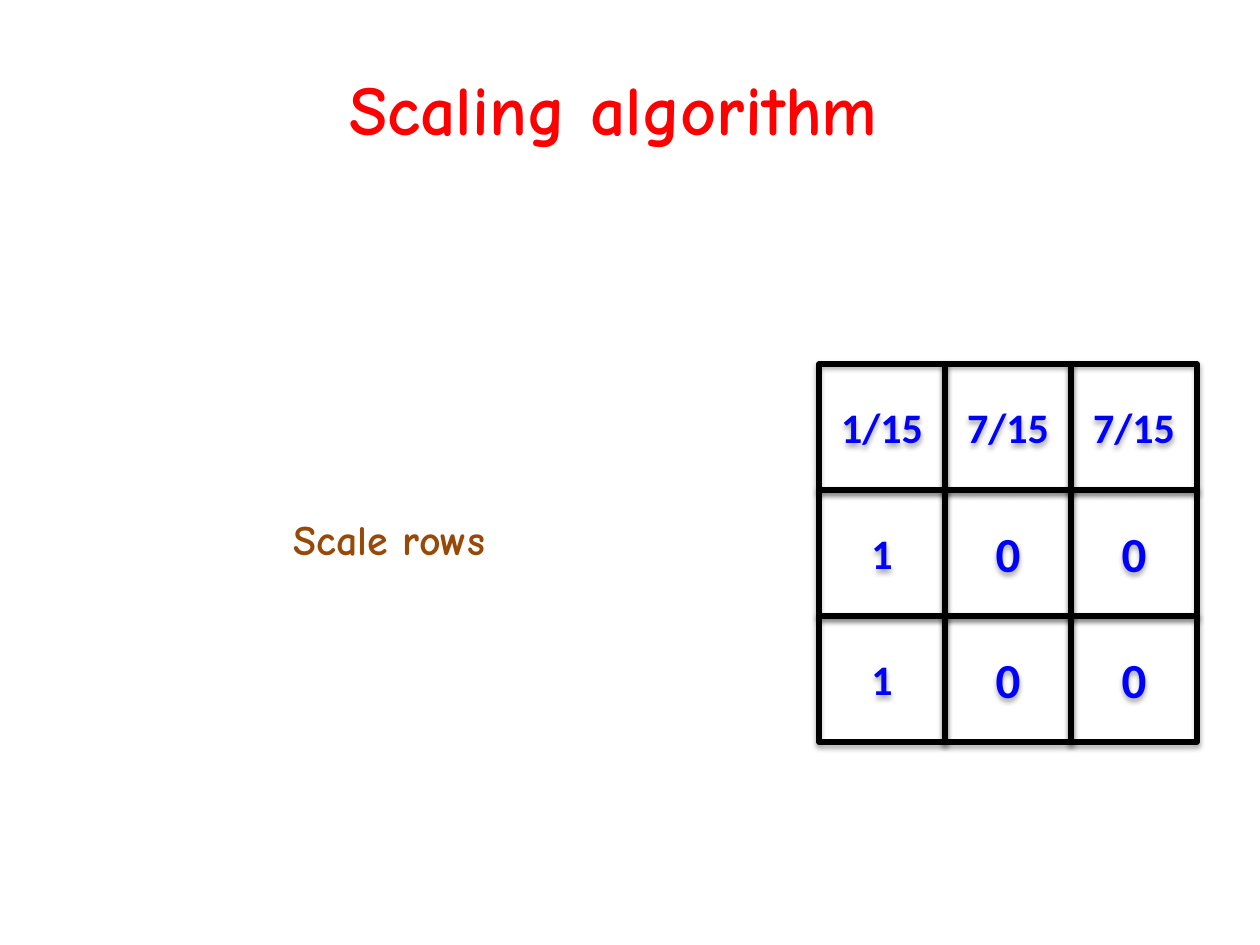
from lxml import etree
from pptx import Presentation
from pptx.dml.color import RGBColor
from pptx.enum.shapes import MSO_SHAPE
from pptx.enum.text import MSO_ANCHOR, MSO_AUTO_SIZE, PP_ALIGN
from pptx.oxml import parse_xml
from pptx.util import Emu, Pt

SHADOW = (
    '<a:effectLst xmlns:a="http://schemas.openxmlformats.org/drawingml/2006/main">'
    '<a:outerShdw blurRad="40000" dist="23000" dir="5400000" rotWithShape="0">'
    '<a:srgbClr val="000000"><a:alpha val="35000"/></a:srgbClr>'
    '</a:outerShdw></a:effectLst>'
)


def px(n):
    return Emu(n * 914400 // 126)


def write(sp, text, size, font, color, align):
    tf = sp.text_frame
    tf.text = text
    p = tf.paragraphs[0]
    p.alignment = align
    r = p.runs[0]
    r.font.size = Pt(size)
    r.font.name = font
    r.font.bold = True
    r.font.color.rgb = RGBColor.from_string(color)
    return tf


prs = Presentation()
prs.slide_width, prs.slide_height = px(1260), px(945)
s = prs.slides.add_slide(prs.slide_layouts[6])

# Matrix of scaled rows
rows = [["1/15", "7/15", "7/15"], ["1", "0", "0"], ["1", "0", "0"]]
left, top, cell = 819, 364, 126
for i, row in enumerate(rows):
    for j, value in enumerate(row):
        sp = s.shapes.add_shape(MSO_SHAPE.RECTANGLE, px(left + j * cell),
                                px(top + i * cell), px(cell), px(cell))
        sp.fill.background()
        sp.line.color.rgb = RGBColor.from_string("000000")
        sp.line.width = Pt(3)
        sp._element.spPr.append(parse_xml(SHADOW))
        size = 28 if value == "0" else 24
        tf = write(sp, value, size, "Calibri", "0000FF", PP_ALIGN.CENTER)
        tf.vertical_anchor = MSO_ANCHOR.MIDDLE

# Title
sp = s.shapes.add_textbox(px(78), px(6), px(1071), px(203))
tf = write(sp, "Scaling algorithm", 40, "Comic Neue", "FF0000", PP_ALIGN.CENTER)
tf.word_wrap = True
tf.vertical_anchor = MSO_ANCHOR.MIDDLE

# Step label
sp = s.shapes.add_textbox(px(281), px(507), px(246), px(63))
tf = write(sp, "Scale rows", 24, "Comic Neue", "984807", PP_ALIGN.LEFT)
tf.word_wrap = False
tf.auto_size = MSO_AUTO_SIZE.SHAPE_TO_FIT_TEXT

prs.save("out.pptx")
